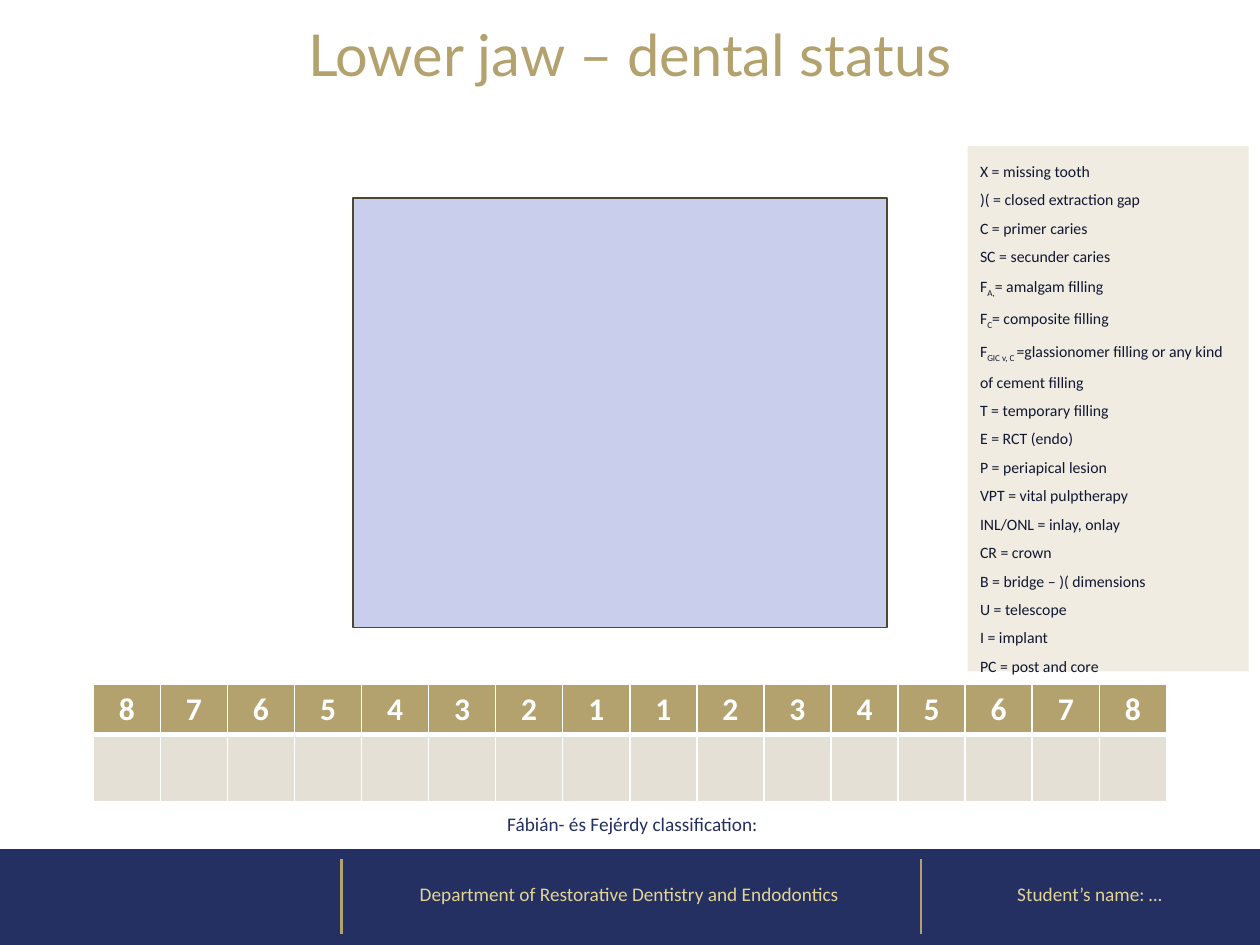
import lxml.etree
import pptx
import pptx.dml.color
import pptx.enum.shapes
import pptx.enum.text
import pptx.oxml.ns
import pptx.util
from pptx.util import Inches

COLORS = {
    "navy": "242F62", "gold": "B3A16E", "pale_gold": "E3D496",
    "sand": "E5E0D5", "cream": "F0ECE2", "lilac": "C8CEEB",
    "brown": "4E4730", "ink": "121731", "white": "FFFFFF",
}
TEETH = [*range(8, 0, -1), *range(1, 9)]
LEGEND = [
    ["X = missing tooth"],
    [")( = closed extraction gap"],
    ["C = primer caries"],
    ["SC = secunder caries"],
    ["F", "A,", "= amalgam filling"],
    ["F", "C", "= composite filling"],
    ["F", "GIC v, C ", "=glassionomer filling or any kind of cement filling"],
    ["T = temporary filling"],
    ["E = RCT (endo)"],
    ["P = periapical lesion"],
    ["VPT = vital pulptherapy"],
    ["INL/ONL = inlay, onlay"],
    ["CR = crown"],
    ["B = bridge – )( dimensions"],
    ["U = telescope"],
    ["I = implant"],
    ["PC = post and core"],
]
ANCHOR = pptx.enum.text.MSO_ANCHOR
CENTER = pptx.enum.text.PP_ALIGN.CENTER


def rgb(name):
    return pptx.dml.color.RGBColor.from_string(COLORS[name])


def format_run(r, size, color, font="Calibri", bold=None):
    r.font.size = pptx.util.Pt(size)
    r.font.name = font
    r.font.color.rgb = rgb(color)
    r.font.bold = bold


def add_rect(s, x, y, w, h, fill, line=None):
    sp = s.shapes.add_shape(pptx.enum.shapes.MSO_SHAPE.RECTANGLE,
                            Inches(x), Inches(y), Inches(w), Inches(h))
    sp.shadow.inherit = False
    sp.fill.solid()
    sp.fill.fore_color.rgb = rgb(fill)
    if line:
        sp.line.color.rgb = rgb(line)
        sp.line.width = pptx.util.Pt(1)
    else:
        sp.line.fill.background()
    return sp


def add_label(s, x, y, w, h, parts, color, anchor=ANCHOR.TOP, spacing=None):
    tf = s.shapes.add_textbox(Inches(x), Inches(y), Inches(w), Inches(h)).text_frame
    tf.word_wrap = True
    tf.vertical_anchor = anchor
    p = tf.paragraphs[0]
    p.alignment = CENTER
    p.line_spacing = spacing
    for text in parts:
        r = p.add_run()
        r.text = text
        format_run(r, 11, color)
    return p


def add_divider(s, x):
    line = s.shapes.add_connector(pptx.enum.shapes.MSO_CONNECTOR.STRAIGHT,
                                  Inches(x), Inches(6.82), Inches(x), Inches(7.41))
    line.line.color.rgb = rgb("gold")
    line.line.width = pptx.util.Pt(1.5)
    lxml.etree.SubElement(line._element.spPr, pptx.oxml.ns.qn("a:effectLst"))


def add_footer(s):
    add_rect(s, 0, 6.74, 10, 0.77, "navy")
    add_label(s, 2.69, 6.71, 4.61, 0.79,
              ["Department of Restorative Dentistry and Endodontics"],
              "pale_gold", ANCHOR.MIDDLE, 0.9)
    p = add_label(s, 7.3, 6.71, 2.7, 0.79, ["Student’s name: ", "…"],
                  "pale_gold", ANCHOR.MIDDLE, 0.9)
    p.runs[1].font.italic = True
    for x in (2.71, 7.31):
        add_divider(s, x)


def set_title(s, text):
    sp = s.shapes.title
    sp.left, sp.top, sp.width, sp.height = Inches(0), Inches(0.16), Inches(10), Inches(0.83)
    tf = sp.text_frame
    tf.text = text
    tf.auto_size = pptx.enum.text.MSO_AUTO_SIZE.NONE
    tf.vertical_anchor = ANCHOR.TOP
    p = tf.paragraphs[0]
    p.alignment = CENTER
    p.line_spacing = 0.9
    format_run(p.runs[0], 33, "gold", "Lato")


def style_cell(cell, fill, top, bottom):
    tcPr = cell._tc.get_or_add_tcPr()
    for side, width in (("L", 1), ("R", 1), ("T", top), ("B", bottom)):
        ln = lxml.etree.SubElement(tcPr, pptx.oxml.ns.qn(f"a:ln{side}"),
                                   w=str(pptx.util.Pt(width)))
        solid = lxml.etree.SubElement(ln, pptx.oxml.ns.qn("a:solidFill"))
        lxml.etree.SubElement(solid, pptx.oxml.ns.qn("a:srgbClr"), val=COLORS["white"])
    cell.fill.solid()
    cell.fill.fore_color.rgb = rgb(fill)


def add_tooth_table(s):
    table = s.shapes.add_table(2, len(TEETH), Inches(0.74), Inches(5.43),
                               Inches(8.52), Inches(0.89)).table
    table.rows[0].height = Inches(0.36)
    table.rows[1].height = Inches(0.53)
    for col, tooth in enumerate(TEETH):
        head = table.cell(0, col)
        head.text = str(tooth)
        p = head.text_frame.paragraphs[0]
        p.alignment = CENTER
        format_run(p.runs[0], 18, "white", bold=True)
        style_cell(head, "gold", 1, 3)
        style_cell(table.cell(1, col), "sand", 3, 1)


def add_legend(s):
    tf = add_rect(s, 7.68, 1.16, 2.23, 4.17, "cream").text_frame
    tf.word_wrap = True
    tf.vertical_anchor = ANCHOR.TOP
    for i, parts in enumerate(LEGEND):
        p = tf.add_paragraph() if i else tf.paragraphs[0]
        p.alignment = pptx.enum.text.PP_ALIGN.LEFT
        p.line_spacing = 1.5
        for j, text in enumerate(parts):
            r = p.add_run()
            r.text = text
            format_run(r, 9, "ink")
            if j == 1:
                r._r.get_or_add_rPr().set("baseline", "-25000")


def main():
    """Build the lower jaw dental status slide."""
    prs = pptx.Presentation()
    prs.slide_width, prs.slide_height = Inches(10), Inches(7.5)
    s = prs.slides.add_slide(prs.slide_layouts[5])
    add_footer(s)
    set_title(s, "Lower jaw – dental status")
    add_tooth_table(s)
    add_rect(s, 2.8, 1.57, 4.24, 3.41, "lilac", "brown")
    add_label(s, 2.14, 6.4, 5.76, 0.29, ["Fábián- és Fejérdy classification:"], "navy")
    add_legend(s)
    prs.save("out.pptx")


if __name__ == "__main__":
    main()
